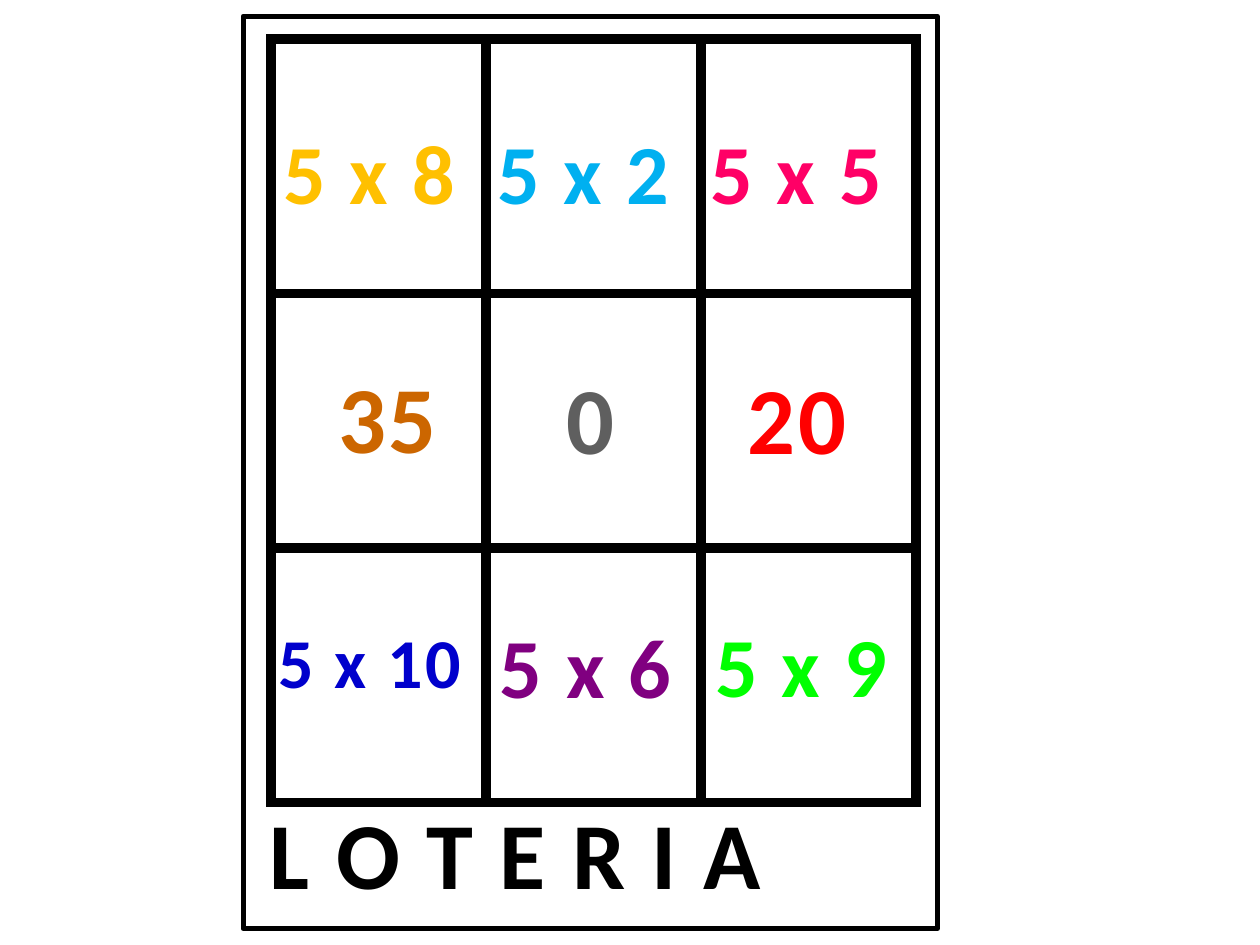
from pptx import Presentation
from pptx.dml.color import RGBColor
from pptx.enum.shapes import MSO_SHAPE
from pptx.enum.text import MSO_ANCHOR, MSO_AUTO_SIZE, PP_ALIGN
from pptx.oxml.ns import qn
from pptx.util import Inches, Pt
from lxml.etree import SubElement

BLACK = "000000"
CARD_VALUES = [
    ("5 x 8", (2.13, 0.91, 1.6, 0.91), 48, "FFC000"),
    ("5 x 2", (3.83, 0.91, 1.6, 0.91), 48, "00B0F0"),
    ("5 x 5", (5.52, 0.91, 1.6, 0.91), 48, "FF0066"),
    ("35", (2.57, 2.8, 1.01, 1.01), 54, "CC6600"),
    ("0", (4.38, 2.81, 0.61, 1.01), 54, "5F5F5F"),
    ("20", (5.82, 2.81, 1.01, 1.01), 54, "FF0000"),
    ("5 x 10", (2.09, 4.86, 1.69, 0.77), 40, "0000CC"),
    ("5 x 6", (3.85, 4.83, 1.6, 0.91), 48, "800080"),
    ("5 x 9", (5.56, 4.82, 1.6, 0.91), 48, "00FF00"),
]


def color(value):
    """Turn a hex string into a colour."""
    return RGBColor.from_string(value)


def inches(box):
    """Turn a box of left, top, width and height into lengths."""
    return [Inches(length) for length in box]


def write_label(shape, text, size, hex_color):
    """Write one bold, centred, letter-spaced line in a shape."""
    frame = shape.text_frame
    frame.text = text
    frame.word_wrap = False
    frame.auto_size = MSO_AUTO_SIZE.SHAPE_TO_FIT_TEXT
    frame.vertical_anchor = MSO_ANCHOR.TOP
    para = frame.paragraphs[0]
    para.alignment = PP_ALIGN.CENTER
    font = para.runs[0].font
    font.name = "Calibri"
    font.size = Pt(size)
    font.bold = True
    font.color.rgb = color(hex_color)
    para.runs[0].font._element.set("spc", "150")


def add_card_frame(page, box):
    """Draw the outline of the card."""
    frame = page.shapes.add_shape(MSO_SHAPE.RECTANGLE, *inches(box))
    frame.shadow.inherit = False
    frame.fill.background()
    frame.line.color.rgb = color(BLACK)
    frame.line.width = Pt(3)


def add_border(cell, width):
    """Give a cell a solid black border on every side."""
    properties = cell._tc.get_or_add_tcPr()
    for side in ("a:lnL", "a:lnR", "a:lnT", "a:lnB"):
        line = SubElement(properties, qn(side), w=str(Pt(width)))
        fill = SubElement(line, qn("a:solidFill"))
        SubElement(fill, qn("a:srgbClr"), val=BLACK)


def add_grid(page, box, count=3):
    """Draw the square grid of empty cells."""
    table = page.shapes.add_table(count, count, *inches(box)).table
    table.first_row = False
    table.horz_banding = False
    for column in table.columns:
        column.width = Inches(box[2] / count)
    for row in table.rows:
        row.height = Inches(box[3] / count)
    for cell in table.iter_cells():
        add_border(cell, 6)
        cell.fill.background()


def add_values(page, values):
    """Place the multiplications and answers of the card."""
    for text, box, size, hex_color in values:
        label = page.shapes.add_textbox(*inches(box))
        write_label(label, text, size, hex_color)


def place_title(page, box):
    """Move and format the title at the foot of the card."""
    title = page.shapes.title
    title.left, title.top, title.width, title.height = inches(box)
    write_label(title, "L O T E R I A", 54, BLACK)


def main():
    """Build the lottery card and save it."""
    deck = Presentation()
    deck.slide_width, deck.slide_height = Inches(10), Inches(7.5)
    page = deck.slides.add_slide(deck.slide_layouts[5])
    add_values(page, CARD_VALUES)
    add_card_frame(page, (1.93, 0.13, 5.51, 7.24))
    place_title(page, (2.01, 6.26, 4.17, 1.01))
    add_grid(page, (2.15, 0.31, 5.12, 6.06))
    deck.save("out.pptx")


if __name__ == "__main__":
    main()
